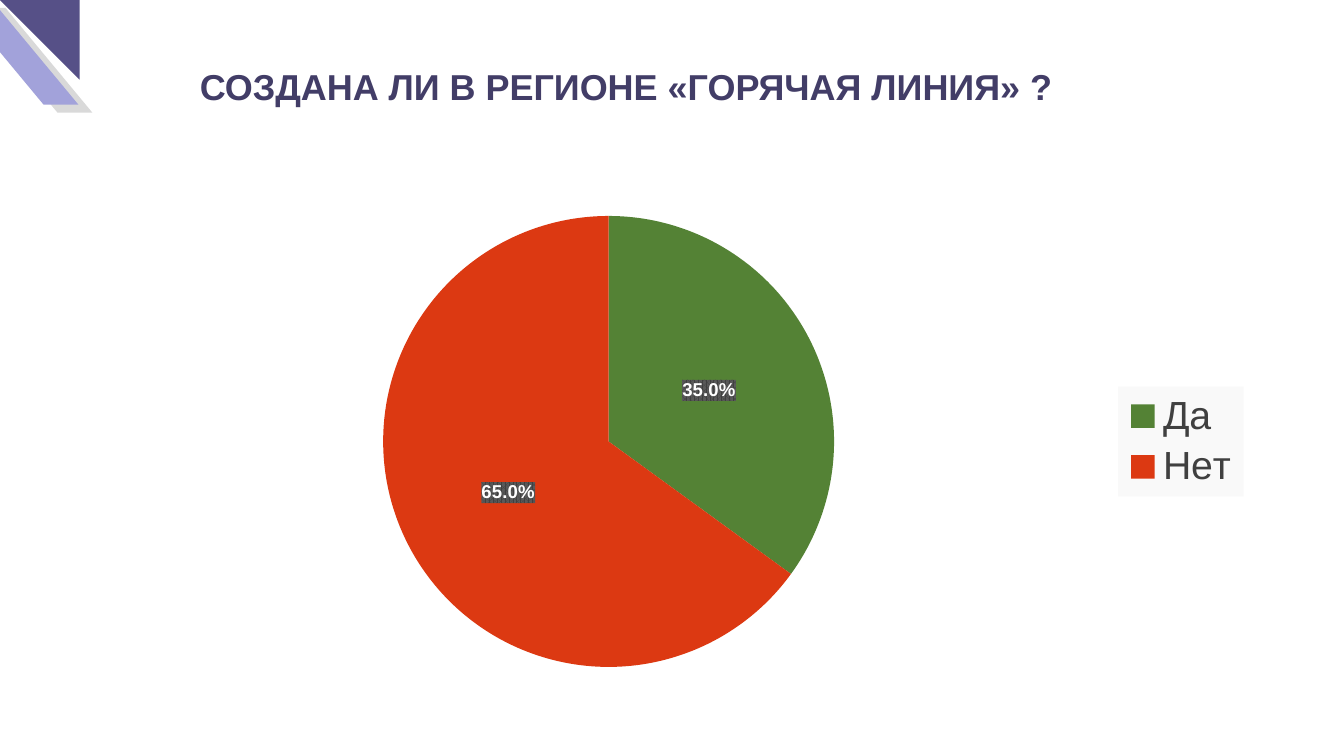
from lxml import etree
from pptx import Presentation
from pptx import util as u
from pptx.chart import data
from pptx.dml import color
from pptx.enum import chart as ce, shapes, text
from pptx.oxml import ns, parse_xml

FONT = "Arial"


def rgb(code):
    """Turn a hex string into a colour."""
    return color.RGBColor.from_string(code)


def style(font, size, code, bold=False):
    """Set the face, size, colour and weight of a font."""
    font.name, font.size, font.bold = FONT, u.Pt(size), bold
    font.color.rgb = rgb(code)


def corner(slide, left, top):
    """Draw the two slanted bands and the triangle of the corner."""
    band = shapes.MSO_SHAPE.PARALLELOGRAM
    wedge = shapes.MSO_SHAPE.RIGHT_TRIANGLE
    parts = [
        (band, -0.74, 0.2, 3.07, 2.64, "D9D9D9", ["flipH"]),
        (band, -1.09, 0, 3.07, 2.64, "A2A2DA", ["flipH"]),
        (wedge, 0, 0, 2.01, 2.01, "565087", ["flipH", "flipV"]),
    ]
    for kind, x, y, wide, high, code, flips in parts:
        part = slide.shapes.add_shape(
            kind, u.Cm(left + x), u.Cm(top + y), u.Cm(wide), u.Cm(high))
        part.shadow.inherit = False
        part.fill.solid()
        part.fill.fore_color.rgb = rgb(code)
        part.line.fill.background()
        if kind == band:
            part.adjustments[0] = 0.83
        for flip in flips:
            part._element.spPr.find(ns.qn("a:xfrm")).set(flip, "1")


def head(slide, left, top, wide, high):
    """Fill and place the title."""
    title = slide.shapes.title
    title.left, title.top = u.Cm(left), u.Cm(top)
    title.width, title.height = u.Cm(wide), u.Cm(high)
    frame = title.text_frame
    frame.text = "СОЗДАНА ЛИ В РЕГИОНЕ «ГОРЯЧАЯ ЛИНИЯ» ?"
    frame.word_wrap = True
    frame.auto_size = text.MSO_AUTO_SIZE.SHAPE_TO_FIT_TEXT
    frame.vertical_anchor = text.MSO_ANCHOR.TOP
    line = frame.paragraphs[0]
    line.alignment = text.PP_ALIGN.LEFT
    style(line.font, 25.7, "423D67", True)


def back(part, fill):
    """Put a fill behind the text of a chart part."""
    node = parse_xml(f"<c:spPr {ns.nsdecls('c', 'a')}>{fill}</c:spPr>")
    part.find(ns.qn("c:txPr")).addprevious(node)


def layout(plot, x, y, wide, high):
    """Fix the inner plot area, in fractions of the chart."""
    for old in plot.findall(ns.qn("c:layout")):
        plot.remove(old)
    node = etree.Element(ns.qn("c:layout"))
    plot.insert(0, node)
    box = etree.SubElement(node, ns.qn("c:manualLayout"))
    rules = [("layoutTarget", "inner"), ("xMode", "edge"), ("yMode", "edge"),
             ("x", x), ("y", y), ("w", wide), ("h", high)]
    for name, val in rules:
        etree.SubElement(box, ns.qn("c:" + name)).set("val", str(val))


def pie(slide, left, top, wide, high):
    """Draw the pie chart of answers with its legend."""
    info = data.CategoryChartData()
    info.categories = ["Да", "Нет"]
    info.add_series("Series 1", (35, 65))
    chart = slide.shapes.add_chart(
        ce.XL_CHART_TYPE.PIE, u.Cm(left), u.Cm(top), u.Cm(wide), u.Cm(high),
        info).chart
    style(chart.font, 10, "000000")
    chart.has_title = False
    layout(chart._chartSpace.chart.plotArea, 0.25, 0.03, 0.39, 0.94)

    chart.has_legend = True
    legend = chart.legend
    legend.position = ce.XL_LEGEND_POSITION.RIGHT
    legend.include_in_layout = False
    style(legend.font, 28, "404040")
    back(legend._element,
         '<a:solidFill><a:srgbClr val="F9F9F9"/></a:solidFill>')

    plot = chart.plots[0]
    plot.vary_by_categories = True
    row = plot.series[0]
    for spot, code in enumerate(("548235", "DC3912")):
        look = row.points[spot].format
        look.fill.solid()
        look.fill.fore_color.rgb = rgb(code)
        look.line.fill.background()

    tags = row.data_labels
    tags.show_percentage, tags.show_value = True, False
    tags.number_format, tags.number_format_is_linked = "0.0%", False
    tags.position = ce.XL_LABEL_POSITION.CENTER
    style(tags.font, 13.3, "FFFFFF", True)
    back(tags._element,
         '<a:pattFill prst="pct75"><a:fgClr><a:srgbClr val="404040"/></a:fgClr>'
         '<a:bgClr><a:srgbClr val="595959"/></a:bgClr></a:pattFill>')


def main():
    """Build and save the slide."""
    deck = Presentation()
    deck.slide_width, deck.slide_height = u.Cm(33.87), u.Cm(19.05)
    slide = deck.slides.add_slide(deck.slide_layouts[5])
    corner(slide, 0, 0)
    head(slide, 4.78, 1.5, 23.44, 1.35)
    pie(slide, 2.34, 5.08, 29.21, 12.09)
    deck.save("out.pptx")


if __name__ == "__main__":
    main()
